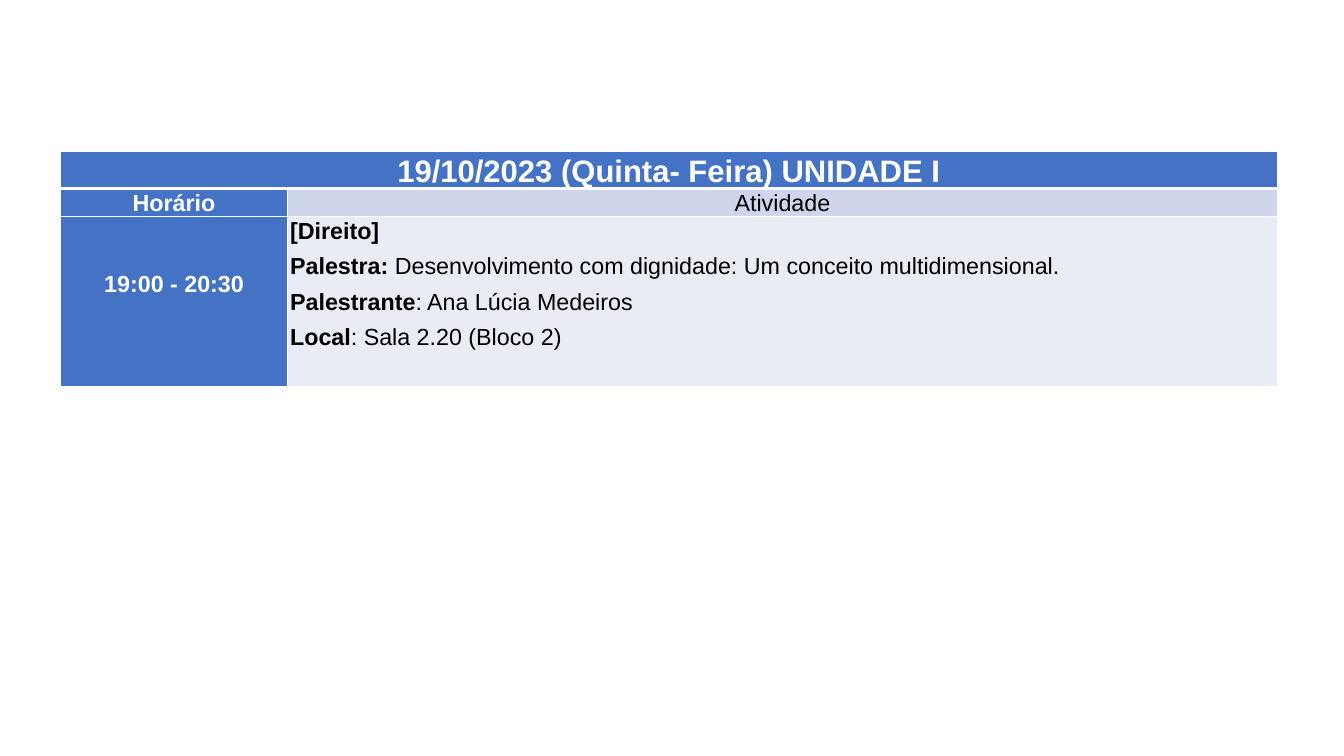
from lxml import etree
from pptx import Presentation
from pptx.dml.color import RGBColor
from pptx.enum.text import MSO_ANCHOR as ANCHOR, PP_ALIGN as ALIGN
from pptx.oxml import parse_xml
from pptx.oxml.ns import nsdecls
from pptx.util import Cm, Pt

BLUE, WHITE, BLACK = "4472C4", "FFFFFF", "000000"


def rgb(color):
    return RGBColor.from_string(color)


def fill_cell(cell, lines, fill, color, size=24, align=ALIGN.CENTER, bottom=0, widths=(1, 1)):
    """Lines hold (text, bold) runs; widths are the top and bottom borders in points."""
    cell.fill.solid()
    cell.fill.fore_color.rgb = rgb(fill)
    cell.vertical_anchor = ANCHOR.MIDDLE
    cell.margin_left = cell.margin_right = Cm(0.1)
    cell.margin_top, cell.margin_bottom = 0, Cm(bottom)
    tf = cell.text_frame
    for i, runs in enumerate(lines):
        p = tf.add_paragraph() if i else tf.paragraphs[0]
        p.alignment, p.line_spacing, p.space_after = align, 1.07, Pt(8)
        p.font.name, p.font.size, p.font.color.rgb = "Arial", Pt(size), rgb(color)
        for text, bold in runs:
            r = p.add_run()
            r.text, r.font.bold = text, bold
    tc_pr = cell._tc.get_or_add_tcPr()
    for i, (side, width) in enumerate(zip("LRTB", (1, 1) + widths)):
        tc_pr.insert(i, parse_xml(
            f'<a:ln{side} {nsdecls("a")} w="{Pt(width)}"><a:solidFill>'
            f'<a:srgbClr val="{WHITE}"/></a:solidFill></a:ln{side}>'))


prs = Presentation()
prs.slide_width, prs.slide_height = Cm(48.92), Cm(27.51)
s = prs.slides.add_slide(prs.slide_layouts[6])

col_widths, row_heights = (8.25, 36.04), (1.33, 1, 6.17)
table = s.shapes.add_table(3, 2, Cm(2.21), Cm(5.51),
                           Cm(sum(col_widths)), Cm(sum(row_heights))).table
for col, width in zip(table.columns, col_widths):
    col.width = Cm(width)
for row, height in zip(table.rows, row_heights):
    row.height = Cm(height)

title = table.cell(0, 0)
title.merge(table.cell(0, 1))
fill_cell(title, [[("19/10/2023 (Quinta- Feira) UNIDADE I", True)]], BLUE, WHITE,
          size=32, widths=(1, 3))
fill_cell(table.cell(1, 0), [[("Horário", True)]], BLUE, WHITE, widths=(3, 1))
fill_cell(table.cell(1, 1), [[("Atividade", False)]], "CFD5EA", BLACK, widths=(3, 1))
fill_cell(table.cell(2, 0), [[("19:00 - 20:30", True)]], BLUE, WHITE, bottom=1.29)

activity = [
    [("[Direito]", True)],
    [("Palestra: ", True),
     ("Desenvolvimento com dignidade: Um conceito multidimensional.", False)],
    [("Palestrante", True), (": Ana Lúcia Medeiros", False)],
    [("Local", True), (": Sala 2.20 (Bloco 2)", False)],
]
fill_cell(table.cell(2, 1), activity, "E9EBF5", BLACK, align=ALIGN.LEFT, bottom=1.29)

prs.save("out.pptx")
